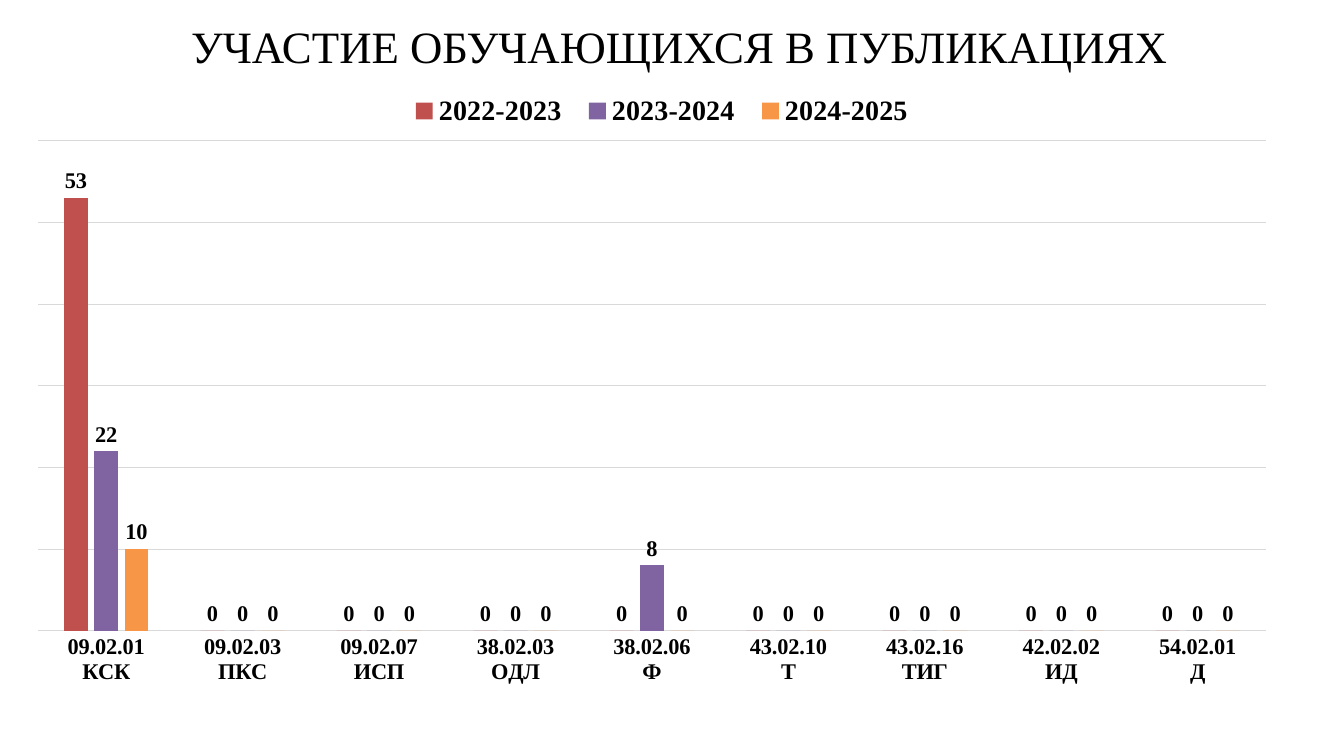
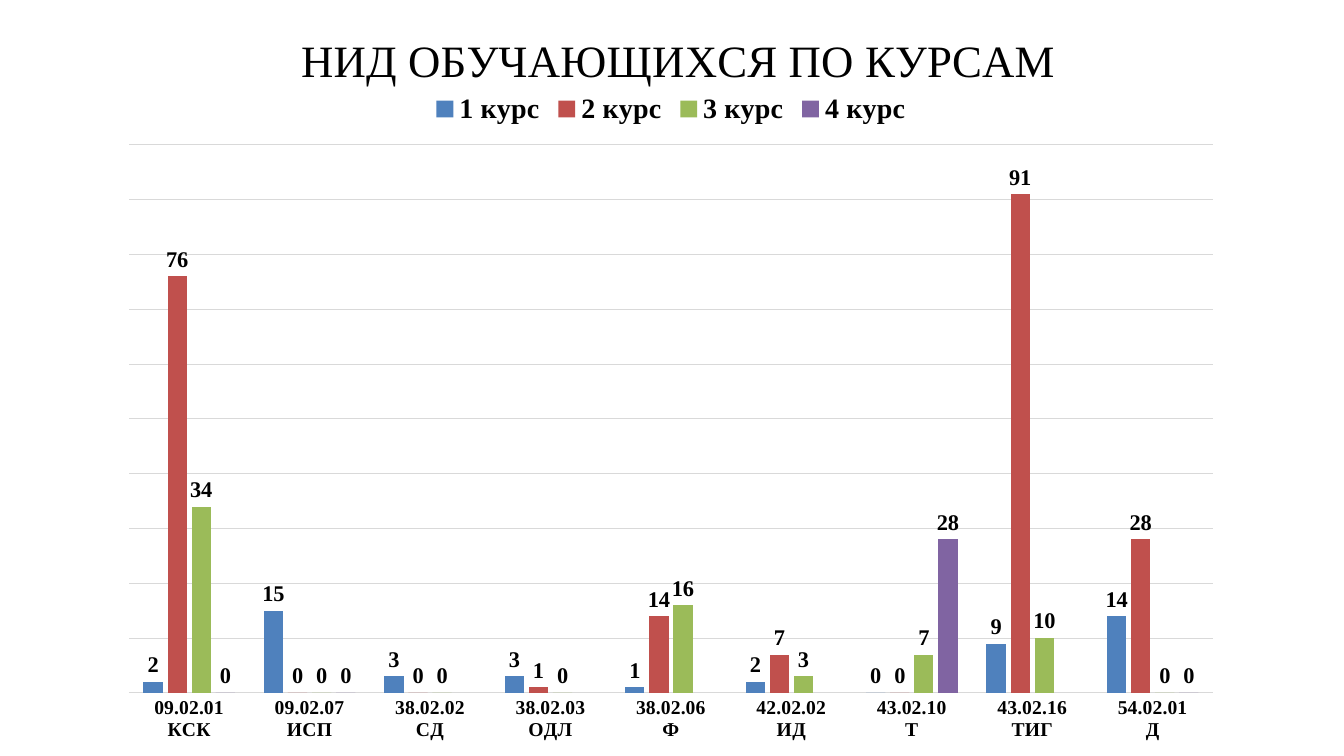
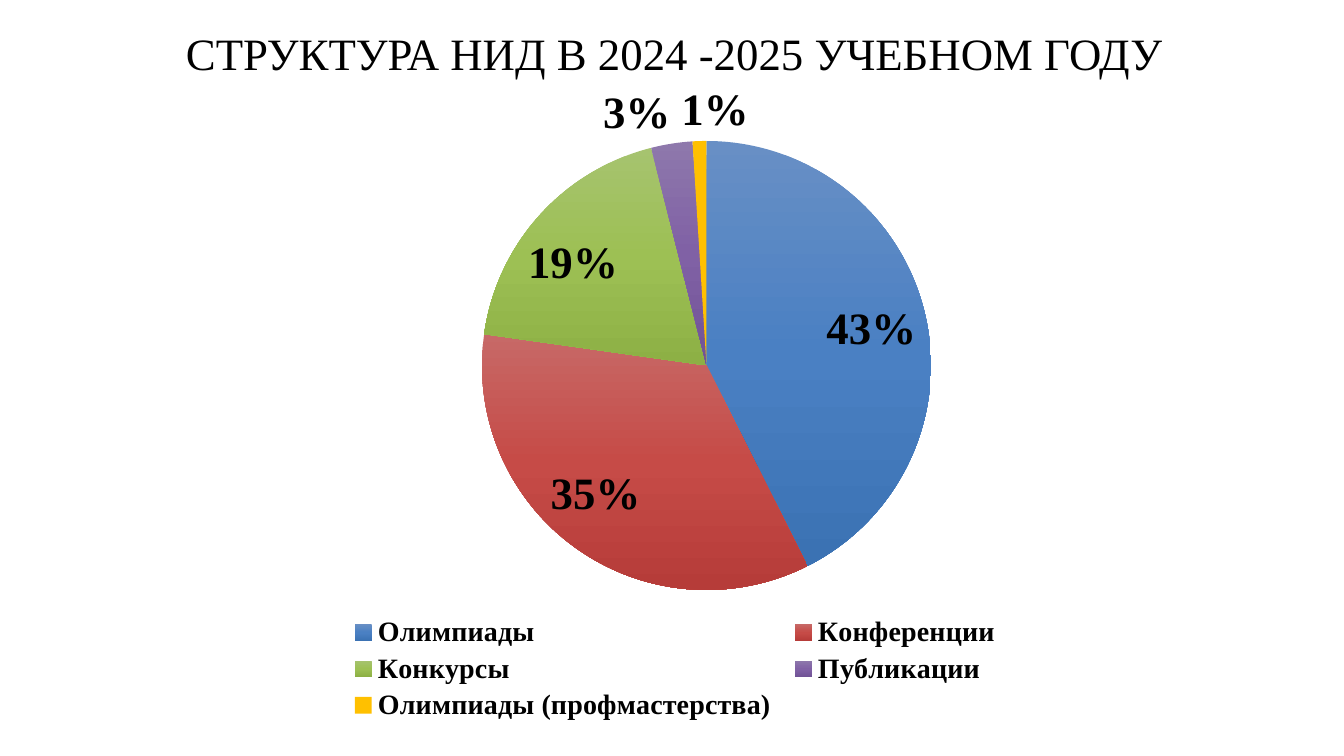
from copy import deepcopy

from lxml import etree
from pptx import Presentation
from pptx.chart.data import CategoryChartData
from pptx.dml.color import RGBColor
from pptx.enum.chart import (XL_CHART_TYPE, XL_LABEL_POSITION,
                             XL_LEGEND_POSITION, XL_TICK_MARK)
from pptx.enum.text import MSO_ANCHOR, PP_ALIGN
from pptx.oxml.ns import qn
from pptx.util import Pt

COLUMNS, PIE = XL_CHART_TYPE.COLUMN_CLUSTERED, XL_CHART_TYPE.PIE
OUTSIDE, BEST_FIT = XL_LABEL_POSITION.OUTSIDE_END, XL_LABEL_POSITION.BEST_FIT
TOP, BOTTOM = XL_LEGEND_POSITION.TOP, XL_LEGEND_POSITION.BOTTOM
NO_TICK = XL_TICK_MARK.NONE
CENTER, MIDDLE = PP_ALIGN.CENTER, MSO_ANCHOR.MIDDLE

EMU_PER_PX = 914400 / 100.8
SLIDE_W, SLIDE_H = 1344, 756
TITLE_ONLY, BLANK = 5, 6

FONT = "Times New Roman"
BLACK, GRID = "000000", "D9D9D9"
BLUE, RED, GREEN = "4F81BD", "C0504D", "9BBB59"
PURPLE, ORANGE, GOLD = "8064A2", "F79646", "FFC000"
TITLE_SIZE, LEGEND_SIZE, LABEL_SIZE = 32, 20, 16


def px(value):
    return round(value * EMU_PER_PX)


def rgb(color):
    return RGBColor.from_string(color)


def style_font(font, size, bold=True):
    font.name, font.size, font.bold = FONT, Pt(size), bold
    font.color.rgb = rgb(BLACK)


def style_line(line):
    line.color.rgb = rgb(GRID)
    line.width = Pt(0.75)


def add_title(s, box, text):
    """Fill the title placeholder and move it to the box."""
    title = s.shapes.title
    title.left, title.top, title.width, title.height = map(px, box)
    tf = title.text_frame
    tf.word_wrap, tf.vertical_anchor = True, MIDDLE
    p = tf.paragraphs[0]
    p.text, p.alignment, p.line_spacing = text, CENTER, 0.9
    style_font(p.font, TITLE_SIZE, False)


def place_part(element, index, chart_box, part_box, inner=False):
    """Fix a chart part at a slide position; two numbers set only its corner."""
    for old in element.findall(qn("c:layout")):
        element.remove(old)
    layout = etree.Element(qn("c:layout"))
    manual = etree.SubElement(layout, qn("c:manualLayout"))
    left, top, width, height = chart_box
    fractions = [(part_box[0] - left) / width, (part_box[1] - top) / height]
    if len(part_box) == 4:
        fractions += [part_box[2] / width, part_box[3] / height]
    settings = [("layoutTarget", "inner")] if inner else []
    settings += [("xMode", "edge"), ("yMode", "edge")]
    settings += [(k, f"{v:.4f}") for k, v in zip("xywh", fractions)]
    for tag, value in settings:
        etree.SubElement(manual, qn(f"c:{tag}")).set("val", value)
    element.insert(index, layout)


def add_chart(s, kind, box, plot_box, legend_box, legend_side, cats, series):
    """Chart with a fixed plot area and legend."""
    data = CategoryChartData()
    data.categories = cats
    for name, values in series:
        data.add_series(name, values)
    chart = s.shapes.add_chart(kind, *map(px, box), data).chart
    style_font(chart.font, 14)
    chart.has_title = False
    chart.has_legend = True
    legend = chart.legend
    legend.position, legend.include_in_layout = legend_side, False
    style_font(legend.font, LEGEND_SIZE)
    place_part(legend._element, 1, box, legend_box)
    plot_area = chart.plots[0]._element.getparent()
    place_part(plot_area, 0, box, plot_box, inner=True)
    return chart


def add_columns(s, box, plot_box, legend_box, legend_side, cats, series,
                colors, top, cat_size, gap, overlap):
    """Clustered columns with value labels and a hidden value axis."""
    chart = add_chart(s, COLUMNS, box, plot_box, legend_box, legend_side,
                      cats, series)
    plot = chart.plots[0]
    plot.gap_width, plot.overlap, plot.vary_by_categories = gap, overlap, False
    for ser, color in zip(plot.series, colors):
        ser.format.fill.solid()
        ser.format.fill.fore_color.rgb = rgb(color)
        labels = ser.data_labels
        labels.show_value, labels.position = True, OUTSIDE
        style_font(labels.font, LABEL_SIZE)

    cat_axis, val_axis = chart.category_axis, chart.value_axis
    cat_axis.major_tick_mark = NO_TICK
    style_line(cat_axis.format.line)
    style_font(cat_axis.tick_labels.font, cat_size)
    val_axis.minimum_scale, val_axis.maximum_scale = 0, top
    val_axis.major_unit = 10
    val_axis.has_major_gridlines = True
    style_line(val_axis.major_gridlines.format.line)
    val_axis.visible = False
    return chart


def add_pie(s, box, plot_box, legend_box, cats, values, fills):
    """Pie with percent labels; a fill is one colour or three gradient stops."""
    chart = add_chart(s, PIE, box, plot_box, legend_box, BOTTOM, cats,
                      [("Структура", values)])
    ser = chart.plots[0].series[0]
    for i, colors in enumerate(fills):
        fill = ser.points[i].format.fill
        if len(colors) == 1:
            fill.solid()
            fill.fore_color.rgb = rgb(colors[0])
            continue
        fill.gradient()
        fill.gradient_angle = 270
        stops = list(ser._element.iter(qn("a:gsLst")))[-1]
        stops.append(deepcopy(stops[0]))
        for j, (stop, color) in enumerate(zip(fill.gradient_stops, colors)):
            stop.position = j / 2
            stop.color.rgb = rgb(color)
    labels = ser.data_labels
    labels.show_value, labels.show_percentage = False, True
    labels.number_format, labels.number_format_is_linked = "0%", False
    labels.position = BEST_FIT
    style_font(labels.font, TITLE_SIZE)


def publications_slide(prs):
    s = prs.slides.add_slide(prs.slide_layouts[TITLE_ONLY])
    add_title(s, (100, -24, 1159, 146), "УЧАСТИЕ ОБУЧАЮЩИХСЯ В ПУБЛИКАЦИЯХ")
    cats = ["09.02.01\nКСК", "09.02.03\nПКС", "09.02.07\nИСП",
            "38.02.03\nОДЛ", "38.02.06\nФ", "43.02.10\nТ",
            "43.02.16\nТИГ", "42.02.02\nИД", "54.02.01\nД"]
    series = [("2022-2023", [53, 0, 0, 0, 0, 0, 0, 0, 0]),
              ("2023-2024", [22, 0, 0, 0, 8, 0, 0, 0, 0]),
              ("2024-2025", [10, 0, 0, 0, 0, 0, 0, 0, 0])]
    add_columns(s, (23, 69, 1252, 667), (38, 141, 1228, 490),
                (398, 92, 528, 38), BOTTOM, cats, series,
                [RED, PURPLE, ORANGE], top=60, cat_size=16,
                gap=219, overlap=-27)


def courses_slide(prs):
    s = prs.slides.add_slide(prs.slide_layouts[BLANK])
    cats = ["09.02.01\nКСК", "09.02.07\nИСП", "38.02.02\nСД",
            "38.02.03\nОДЛ", "38.02.06\nФ", "42.02.02\nИД",
            "43.02.10\nТ", "43.02.16\nТИГ", "54.02.01\nД"]
    series = [("1 курс", [2, 15, 3, 3, 1, 2, 0, 9, 14]),
              ("2 курс", [76, 0, 0, 1, 14, 7, 0, 91, 28]),
              ("3 курс", [34, 0, 0, 0, 16, 3, 7, 10, 0]),
              ("4 курс", [0, 0, None, None, None, None, 28, None, 0])]
    box = (107, 0, 1128, 756)
    chart = add_columns(s, box, (129, 145, 1084, 548), (427, 90, 488, 38),
                        TOP, cats, series, [BLUE, RED, GREEN, PURPLE],
                        top=100, cat_size=14, gap=150, overlap=-25)
    # The heading of this slide belongs to the chart
    chart.has_title = True
    title = chart.chart_title
    p = title.text_frame.paragraphs[0]
    p.text = "НИД ОБУЧАЮЩИХСЯ ПО КУРСАМ"
    style_font(p.font, TITLE_SIZE, False)
    place_part(title._element, 1, box, (293, 24))


def structure_slide(prs):
    s = prs.slides.add_slide(prs.slide_layouts[TITLE_ONLY])
    add_title(s, (95, 0, 1159, 112), "СТРУКТУРА НИД В 2024 -2025 УЧЕБНОМ ГОДУ")
    cats = ["Олимпиады", "Конференции", "Конкурсы", "Публикации",
            "Олимпиады (профмастерства)"]
    fills = [("688FC5", "4A80C3", "3B72B3"), ("C76967", "C64B47", "B63C39"),
             ("A6C36F", "9DC054", "8DB045"), ("8E78AC", "8061A5", "715396"),
             (GOLD,)]
    add_pie(s, (17, 72, 1314, 656), (482, 141, 449, 449),
            (340, 612, 670, 114), cats, [43, 35, 19, 3, 1], fills)


def main():
    prs = Presentation()
    prs.slide_width, prs.slide_height = px(SLIDE_W), px(SLIDE_H)
    publications_slide(prs)
    courses_slide(prs)
    structure_slide(prs)
    prs.save("out.pptx")


if __name__ == "__main__":
    main()
